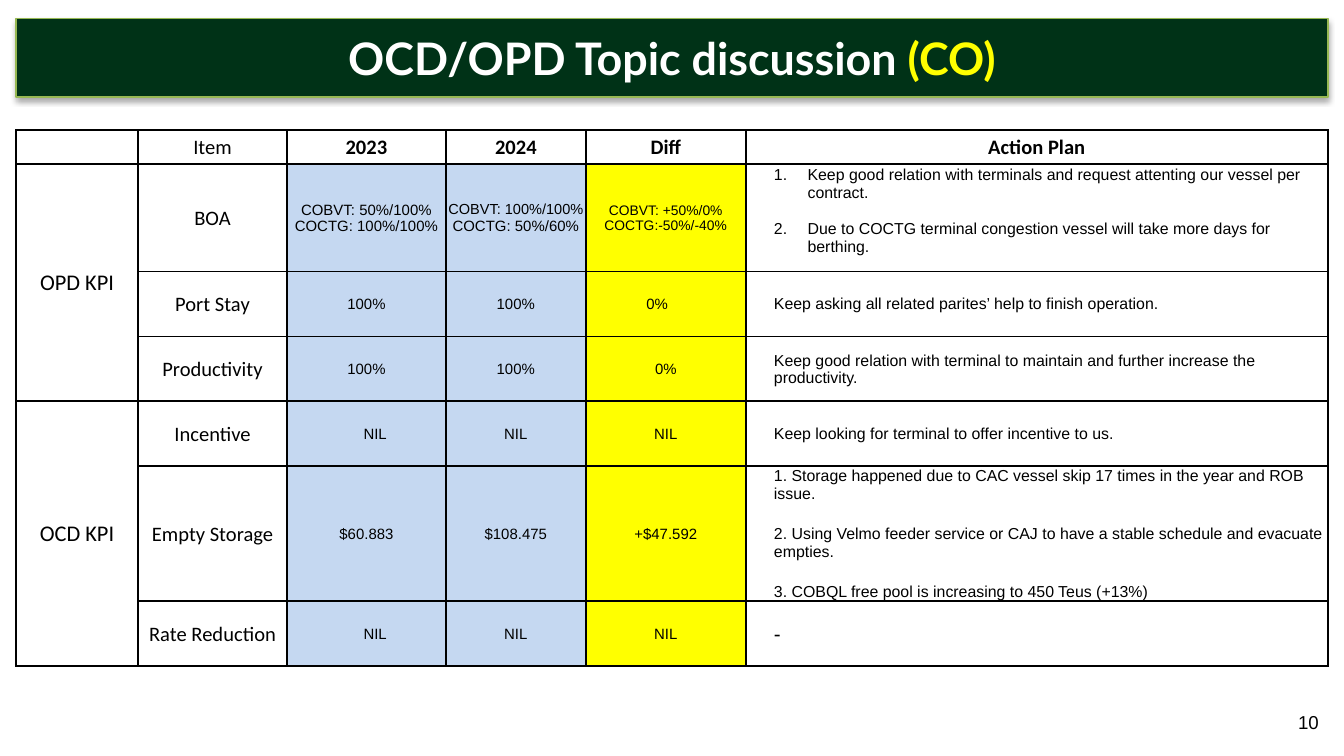
from lxml import etree
from pptx import Presentation
from pptx.dml.color import RGBColor
from pptx.enum.text import MSO_ANCHOR, MSO_AUTO_SIZE, PP_ALIGN
from pptx.oxml.ns import qn
from pptx.util import Pt

LEFT, CENTER = PP_ALIGN.LEFT, PP_ALIGN.CENTER
MIDDLE = MSO_ANCHOR.MIDDLE
NO_AUTOFIT = MSO_AUTO_SIZE.NONE

BLACK = RGBColor(0x00, 0x00, 0x00)
WHITE = RGBColor(0xFF, 0xFF, 0xFF)
YELLOW = RGBColor(0xFF, 0xFF, 0x00)
DARK_GREEN = RGBColor(0x00, 0x32, 0x17)
LIGHT_GREEN = RGBColor(0x97, 0xB8, 0x53)
LIGHT_BLUE = RGBColor(0xC5, 0xD8, 0xF1)

LEFT_EDGE, CONTENT_WIDTH = 8.6, 702.8
COLUMN_WIDTHS = [65.4, 79.8, 85.1, 75, 85.7, 311.8]
ROW_HEIGHTS = [18, 57.6, 34.8, 34.8, 34.8, 72, 34.8]
VALUE_FILLS = [LIGHT_BLUE, LIGHT_BLUE, YELLOW]
ACTION_COLUMN = 5

HEADERS = ["", "Item", "2023", "2024", "Diff", "Action Plan"]
GROUPS = [("OPD KPI", 1, 3), ("OCD KPI", 4, 6)]
ROWS = [
    ("BOA", "COBVT: 50%/100%\nCOCTG: 100%/100%",
     "COBVT: 100%/100%\nCOCTG: 50%/60%", "COBVT: +50%/0%\nCOCTG:-50%/-40%",
     "Keep good relation with terminals and request attenting our vessel per contract.\n"
     "Due to COCTG terminal congestion vessel will take more days for berthing."),
    ("Port Stay", "100%", "100%", "0%",
     "Keep asking all related parites’ help to finish operation."),
    ("Productivity", "100%", "100%", "0%",
     "Keep good relation with terminal to maintain and further increase the productivity."),
    ("Incentive", "NIL", "NIL", "NIL",
     "Keep looking for terminal to offer incentive to us."),
    ("Empty Storage", "$60.883", "$108.475", "+$47.592",
     "1. Storage happened due to CAC vessel skip 17 times in the year and ROB issue.\n"
     "2. Using Velmo feeder service or CAJ to have a stable schedule and evacuate empties.\n"
     "3. COBQL free pool is increasing to 450 Teus (+13%)"),
    ("Rate Reduction", "NIL", "NIL", "NIL", "-"),
]


class SlideWriter:
    heading_font, label_font, body_font = "Lato", "Calibri", "Arial"

    def __init__(self, slide):
        self.slide = slide

    def style(self, font, name, size, color=BLACK, bold=False):
        font.name, font.size, font.bold = name, Pt(size), bold
        font.color.rgb = color

    def banner(self, spans, left, top, width, height):
        """Fill the title placeholder with (text, colour) spans on a shadowed bar."""
        title = self.slide.shapes.title
        title.left, title.top = Pt(left), Pt(top)
        title.width, title.height = Pt(width), Pt(height)
        title.fill.solid()
        title.fill.fore_color.rgb = DARK_GREEN
        title.line.color.rgb = LIGHT_GREEN
        title.line.width = Pt(0.75)
        self.drop_shadow(title)
        frame = title.text_frame
        frame.auto_size, frame.vertical_anchor = NO_AUTOFIT, MIDDLE
        frame.margin_left = frame.margin_right = 0
        frame.margin_top = frame.margin_bottom = 0
        para = frame.paragraphs[0]
        para.alignment = CENTER
        for text, color in spans:
            span = para.add_run()
            span.text = text
            self.style(span.font, self.heading_font, 24, color, bold=True)

    def drop_shadow(self, shape):
        shape.shadow.inherit = False
        effects = shape._element.spPr.find(qn("a:effectLst"))
        shadow = etree.SubElement(
            effects, qn("a:outerShdw"), blurRad=str(Pt(3.1)), dist=str(Pt(1.8)),
            dir="5400000", algn="t", rotWithShape="0")
        color = etree.SubElement(shadow, qn("a:srgbClr"), val=str(BLACK))
        etree.SubElement(color, qn("a:alpha"), val="35000")

    def table(self, left, top, widths, heights):
        table = self.slide.shapes.add_table(
            len(heights), len(widths), Pt(left), Pt(top),
            Pt(sum(widths)), Pt(sum(heights))).table
        table.first_row = table.horz_banding = False
        for column, width in zip(table.columns, widths):
            column.width = Pt(width)
        for row, height in zip(table.rows, heights):
            row.height = Pt(height)
        for cell in table.iter_cells():
            self.borders(cell)
            cell.fill.background()
        return table

    def borders(self, cell):
        properties = cell._tc.get_or_add_tcPr()
        for side in ("lnL", "lnR", "lnT", "lnB"):
            line = etree.SubElement(properties, qn(f"a:{side}"), w=str(Pt(1)))
            fill = etree.SubElement(line, qn("a:solidFill"))
            etree.SubElement(fill, qn("a:srgbClr"), val=str(BLACK))

    def cell(self, cell, text, font, size, fill=None, bold=False, align=CENTER, indent=0):
        cell.vertical_anchor = MIDDLE
        cell.margin_left = cell.margin_right = cell.margin_top = Pt(0.7)
        cell.margin_bottom = 0
        if fill is not None:
            cell.fill.solid()
            cell.fill.fore_color.rgb = fill
        cell.text_frame.text = text
        for para in cell.text_frame.paragraphs:
            para.alignment = align
            para._p.get_or_add_pPr().set("marL", str(Pt(indent)))
            for span in para.runs:
                self.style(span.font, font, size, bold=bold)
            if not para.runs:
                etree.SubElement(para._p, qn("a:endParaRPr"), sz=str(size * 100))

    def number(self, para):
        properties = para._p.get_or_add_pPr()
        properties.set("marL", str(Pt(32.4)))
        properties.set("indent", str(Pt(-18)))
        etree.SubElement(properties, qn("a:buFont"), typeface=self.body_font)
        etree.SubElement(properties, qn("a:buAutoNum"), type="arabicPeriod")

    def text(self, text, left, top, width, height, size):
        box = self.slide.shapes.add_textbox(Pt(left), Pt(top), Pt(width), Pt(height))
        frame = box.text_frame
        frame.word_wrap, frame.vertical_anchor = True, MIDDLE
        frame.text = text
        self.style(frame.paragraphs[0].runs[0].font, self.body_font, size)


def fill_table(writer, table):
    for column, text in enumerate(HEADERS):
        writer.cell(table.cell(0, column), text, writer.label_font, 11, bold=column > 1)
    for text, first, last in GROUPS:
        table.cell(first, 0).merge(table.cell(last, 0))
        writer.cell(table.cell(first, 0), text, writer.label_font, 12)
    for row, (item, *values, action) in enumerate(ROWS, start=1):
        writer.cell(table.cell(row, 1), item, writer.label_font, 11)
        for column, (text, fill) in enumerate(zip(values, VALUE_FILLS), start=2):
            writer.cell(table.cell(row, column), text, writer.body_font, 8, fill)
        writer.cell(table.cell(row, ACTION_COLUMN), action, writer.body_font,
                    11 if action == "-" else 8.5, align=LEFT, indent=14.4)


def adjust_cells(writer, table):
    """Apply the numbering, spacing and sizes that single cells need."""
    berthing = table.cell(1, ACTION_COLUMN)
    berthing.margin_bottom = Pt(8)
    for para in berthing.text_frame.paragraphs:
        writer.number(para)
    berthing.text_frame.paragraphs[1].space_before = Pt(9.8)
    for para in table.cell(5, ACTION_COLUMN).text_frame.paragraphs:
        para.space_before = para.space_after = Pt(6)
    table.cell(1, 3).text_frame.paragraphs[0].runs[0].font.size = Pt(7.8)
    for para in table.cell(1, 4).text_frame.paragraphs:
        para.runs[0].font.size = Pt(7.4)
    table.cell(2, 4).margin_right = Pt(10)
    for row in (4, 6):
        table.cell(row, 2).margin_left = Pt(10)


def main():
    deck = Presentation()
    deck.slide_width, deck.slide_height = Pt(720), Pt(405)
    writer = SlideWriter(deck.slides.add_slide(deck.slide_layouts[5]))
    writer.banner([("OCD/OPD Topic discussion ", WHITE), ("(CO)", YELLOW)],
                  LEFT_EDGE, 10, CONTENT_WIDTH, 42)
    table = writer.table(LEFT_EDGE, 69.8, COLUMN_WIDTHS, ROW_HEIGHTS)
    fill_table(writer, table)
    adjust_cells(writer, table)
    writer.text("10", 688.3, 378.7, 46, 16.6, 10)
    deck.save("out.pptx")


if __name__ == "__main__":
    main()
